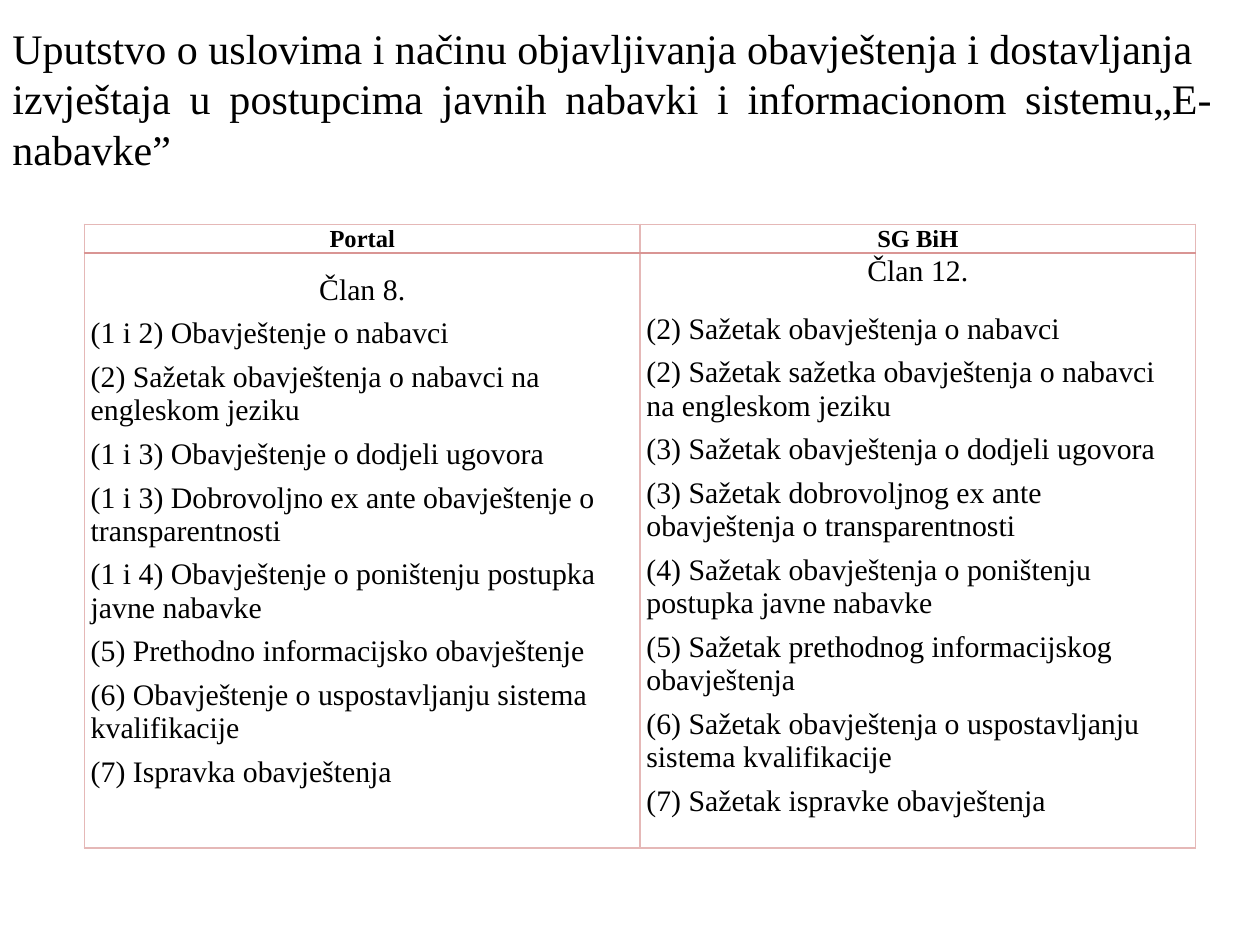
from lxml import etree
from pptx import Presentation
from pptx.dml.color import RGBColor
from pptx.enum.text import MSO_ANCHOR, PP_ALIGN
from pptx.oxml.ns import qn
from pptx.util import Inches, Pt

FONT = "Times New Roman"
BLACK = RGBColor(0x00, 0x00, 0x00)
PINK = RGBColor(0xE5, 0xB8, 0xB7)
ROSE = RGBColor(0xD9, 0x95, 0x94)
THIN, THICK = (PINK, 1), (ROSE, 1.5)

TITLE = [
    "Uputstvo o uslovima i načinu objavljivanja obavještenja i dostavljanja",
    "izvještaja u postupcima javnih nabavki i informacionom sistemu„E-nabavke”",
]
PORTAL_NOTICES = [
    "(1 i 2) Obavještenje o nabavci",
    "(2) Sažetak obavještenja o nabavci na engleskom jeziku",
    "(1 i 3) Obavještenje o dodjeli ugovora",
    "(1 i 3) Dobrovoljno ex ante obavještenje o transparentnosti",
    "(1 i 4) Obavještenje o poništenju postupka javne nabavke",
    "(5) Prethodno informacijsko obavještenje",
    "(6) Obavještenje o uspostavljanju sistema kvalifikacije",
    "(7) Ispravka obavještenja",
]
GAZETTE_NOTICES = [
    "(2) Sažetak obavještenja o nabavci",
    "(2) Sažetak sažetka obavještenja o nabavci na engleskom jeziku",
    "(3) Sažetak obavještenja o dodjeli ugovora",
    "(3) Sažetak dobrovoljnog ex ante obavještenja o transparentnosti",
    "(4) Sažetak obavještenja o poništenju postupka javne nabavke",
    "(5) Sažetak prethodnog informacijskog obavještenja",
    "(6) Sažetak obavještenja o uspostavljanju sistema kvalifikacije",
    "(7) Sažetak ispravke obavještenja",
]
# heading, article, space above the article, spacing of the article line, notices
COLUMNS = [
    ("Portal", "Član 8.", Inches(0.16), {}, PORTAL_NOTICES),
    ("SG BiH", "Član 12.", 0, {"line_spacing": 1.05, "space_after": Pt(8)},
     GAZETTE_NOTICES),
]
HANGING_NOTICES = (2, 7)


def write_paragraphs(frame, lines, size, align, bold=False, **spacing):
    """Fill the empty first paragraph, or append after existing text."""
    written = []
    for line in lines:
        paragraph = frame.add_paragraph() if frame.text else frame.paragraphs[0]
        paragraph.text = line
        paragraph.alignment = align
        for name, value in spacing.items():
            setattr(paragraph, name, value)
        font = paragraph.font
        font.name, font.size, font.bold = FONT, Pt(size), bold
        font.color.rgb = BLACK
        written.append(paragraph)
    return written


def set_borders(cell, top, bottom):
    properties = cell._tc.get_or_add_tcPr()
    sides = {"lnL": THIN, "lnR": THIN, "lnT": top, "lnB": bottom}
    for position, (side, (color, width)) in enumerate(sides.items()):
        line = etree.Element(qn(f"a:{side}"), w=str(Pt(width)))
        fill = etree.SubElement(line, qn("a:solidFill"))
        etree.SubElement(fill, qn("a:srgbClr"), val=str(color))
        properties.insert(position, line)


def prepare_cell(cell, anchor, top, bottom, margin_top=0):
    cell.fill.background()
    set_borders(cell, top, bottom)
    cell.vertical_anchor = anchor
    cell.margin_left = cell.margin_right = Inches(0.05)
    cell.margin_top, cell.margin_bottom = margin_top, 0


def add_title(slide, left, top, width, height):
    frame = slide.shapes.add_textbox(left, top, width, height).text_frame
    frame.word_wrap = True
    write_paragraphs(frame, TITLE, 24, PP_ALIGN.JUSTIFY)


def add_notice_table(slide, left, top, width, height):
    table = slide.shapes.add_table(
        2, len(COLUMNS), left, top, width, height).table
    table.first_row = table.horz_banding = False
    table.rows[0].height = Inches(0.23)
    table.rows[1].height = height - table.rows[0].height

    for index, (heading, article, gap, spacing, notices) in enumerate(COLUMNS):
        header, body = table.cell(0, index), table.cell(1, index)
        prepare_cell(header, MSO_ANCHOR.MIDDLE, THIN, THICK)
        write_paragraphs(header.text_frame, [heading], 14, PP_ALIGN.CENTER,
                         bold=True, line_spacing=1.05, space_after=Pt(8))

        prepare_cell(body, MSO_ANCHOR.TOP, THICK, THIN, gap)
        write_paragraphs(body.text_frame, [article], 17, PP_ALIGN.CENTER,
                         **spacing)
        items = write_paragraphs(body.text_frame, notices, 17, PP_ALIGN.LEFT,
                                 space_before=Pt(6))
        for position in HANGING_NOTICES:
            properties = items[position]._p.get_or_add_pPr()
            properties.set("marL", str(Inches(0.31)))
            properties.set("indent", str(-Inches(0.31)))


def main():
    presentation = Presentation()
    presentation.slide_width = Inches(10)
    presentation.slide_height = Inches(7.5)
    slide = presentation.slides.add_slide(presentation.slide_layouts[6])
    add_notice_table(slide, Inches(0.67), Inches(1.78), Inches(8.82), Inches(4.95))
    add_title(slide, 0, Inches(0.13), Inches(9.72), Inches(1.31))
    presentation.save("out.pptx")


if __name__ == "__main__":
    main()
